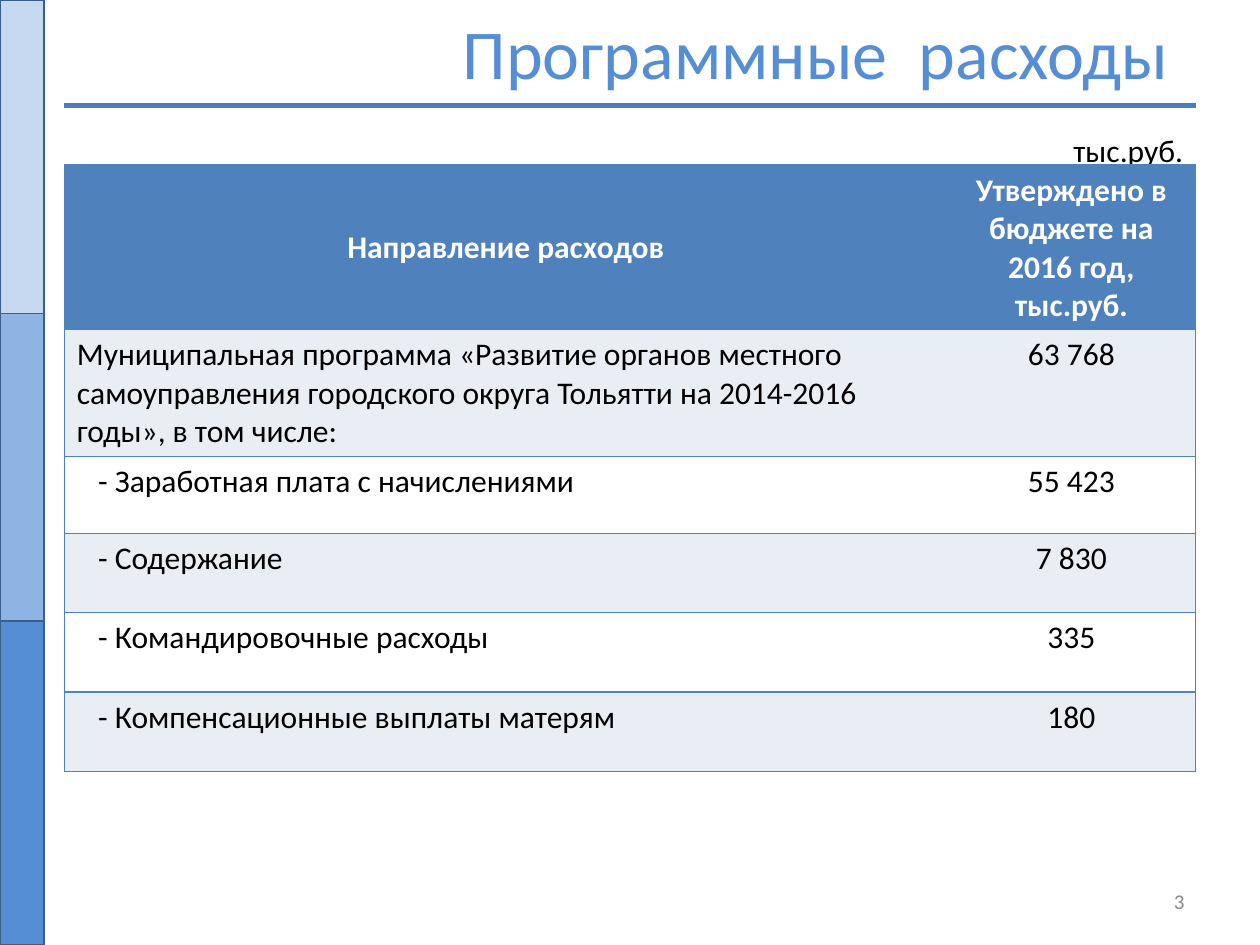
from dataclasses import dataclass

import lxml.etree
import pptx
import pptx.dml.color
import pptx.enum.shapes
import pptx.enum.text
import pptx.oxml.ns
import pptx.util

Cm = pptx.util.Cm
Pt = pptx.util.Pt
RGBColor = pptx.dml.color.RGBColor
Align = pptx.enum.text.PP_ALIGN
Anchor = pptx.enum.text.MSO_ANCHOR
qn = pptx.oxml.ns.qn

FONT = "Calibri"
BLACK = RGBColor(0x00, 0x00, 0x00)
WHITE = RGBColor(0xFF, 0xFF, 0xFF)
GREY = RGBColor(0x8C, 0x8C, 0x8C)
TITLE_BLUE = RGBColor(0x55, 0x8E, 0xD5)
RULE_BLUE = RGBColor(0x4B, 0x7E, 0xBC)
TABLE_BLUE = RGBColor(0x4F, 0x81, 0xBD)
BAND_GREY = RGBColor(0xE9, 0xED, 0xF4)
STRIPE_EDGE = RGBColor(0x3A, 0x5F, 0x8C)
NO_STYLE = "{2D5ABB26-0587-4C30-8999-92F81FD0307C}"
LEFT, RIGHT = 1.3, 24.1


@dataclass
class Stripe:
    top: float
    height: float
    color: RGBColor


@dataclass
class Label:
    text: str
    left: float
    top: float
    width: float
    height: float
    size: int
    color: RGBColor
    anchor: Anchor = Anchor.MIDDLE
    right_margin: float = 0.25


@dataclass
class Expense:
    name: str
    amount: str
    height: float
    indent: float = 0.43
    header: bool = False


STRIPES = [
    Stripe(0, 6.32, RGBColor(0xC6, 0xD9, 0xF1)),
    Stripe(6.32, 6.32, RGBColor(0x8E, 0xB4, 0xE3)),
    Stripe(12.52, 6.53, TITLE_BLUE),
]
LABELS = [
    Label("3", 18.21, 17.65, 5.92, 1.02, 12, GREY),
    Label("Программные  расходы", 1.27, 0.33, 22.86, 1.4, 40, TITLE_BLUE, right_margin=0.57),
    Label("тыс.руб.", 20.29, 2.51, 3.81, 1.02, 18, BLACK, Anchor.TOP),
]
EXPENSES = [
    Expense("Направление расходов", "Утверждено в бюджете на 2016 год, тыс.руб.", 3.31, 0, True),
    Expense(
        "Муниципальная программа «Развитие органов местного самоуправления "
        "городского округа Тольятти на 2014-2016 годы», в том числе:",
        "63 768", 2.56, 0,
    ),
    Expense("- Заработная плата c начислениями", "55 423", 1.55),
    Expense("- Содержание", "7 830", 1.6),
    Expense("- Командировочные расходы", "335", 1.6),
    Expense("- Компенсационные выплаты матерям", "180", 1.6),
]


def write(frame, text: str, size: int, color: RGBColor, align: Align, bold: bool = False) -> None:
    paragraph = frame.paragraphs[0]
    paragraph.alignment = align
    run = paragraph.add_run()
    run.text = text
    run.font.name = FONT
    run.font.size = Pt(size)
    run.font.bold = bold
    run.font.color.rgb = color


def draw_stripe(slide, stripe: Stripe) -> None:
    bar = slide.shapes.add_shape(
        pptx.enum.shapes.MSO_SHAPE.RECTANGLE, 0, Cm(stripe.top), Cm(0.89), Cm(stripe.height)
    )
    bar.shadow.inherit = False
    bar.fill.solid()
    bar.fill.fore_color.rgb = stripe.color
    bar.line.color.rgb = STRIPE_EDGE
    bar.line.width = Pt(0)


def draw_rule(slide) -> None:
    rule = slide.shapes.add_connector(
        pptx.enum.shapes.MSO_CONNECTOR.STRAIGHT, Cm(LEFT), Cm(2.13), Cm(RIGHT), Cm(2.13)
    )
    rule.line.color.rgb = RULE_BLUE
    rule.line.width = Pt(3)
    lxml.etree.SubElement(rule._element.spPr, qn("a:effectLst"))


def draw_label(slide, label: Label) -> None:
    frame = slide.shapes.add_textbox(
        Cm(label.left), Cm(label.top), Cm(label.width), Cm(label.height)
    ).text_frame
    frame.word_wrap = True
    frame.vertical_anchor = label.anchor
    frame.margin_right = Cm(label.right_margin)
    write(frame, label.text, label.size, label.color, Align.RIGHT)


def add_borders(cell, sides: str) -> None:
    properties = cell._tc.get_or_add_tcPr()
    for side in sides:
        border = lxml.etree.SubElement(properties, qn(f"a:ln{side}"), w=str(Pt(1)))
        fill = lxml.etree.SubElement(border, qn("a:solidFill"))
        lxml.etree.SubElement(fill, qn("a:srgbClr"), val=str(TABLE_BLUE))


def draw_expenses(slide, expenses: list[Expense]) -> None:
    total = sum(expense.height for expense in expenses)
    table = slide.shapes.add_table(
        len(expenses), 2, Cm(LEFT), Cm(3.33), Cm(RIGHT - LEFT), Cm(total)
    ).table
    table.horz_banding = False
    table._tbl.tblPr.find(qn("a:tableStyleId")).text = NO_STYLE
    table.columns[0].width = Cm(17.8)
    table.columns[1].width = Cm(5)
    for row, expense in enumerate(expenses):
        table.rows[row].height = Cm(expense.height)
        band = TABLE_BLUE if expense.header else BAND_GREY if row % 2 else WHITE
        for column, text in enumerate((expense.name, expense.amount)):
            cell = table.cell(row, column)
            add_borders(cell, "RTB" if column else "LTB")
            cell.fill.solid()
            cell.fill.fore_color.rgb = band
            cell.vertical_anchor = Anchor.MIDDLE if expense.header else Anchor.TOP
            cell.margin_left = Cm(0.25 if column else 0.25 + expense.indent)
            align = Align.CENTER if column or expense.header else Align.LEFT
            color = WHITE if expense.header else BLACK
            write(cell.text_frame, text, 18, color, align, expense.header)


def main() -> None:
    deck = pptx.Presentation()
    deck.slide_width = Cm(25.4)
    deck.slide_height = Cm(19.05)
    slide = deck.slides.add_slide(deck.slide_layouts[6])
    for stripe in STRIPES:
        draw_stripe(slide, stripe)
    draw_rule(slide)
    for label in LABELS:
        draw_label(slide, label)
    draw_expenses(slide, EXPENSES)
    deck.save("out.pptx")


if __name__ == "__main__":
    main()
